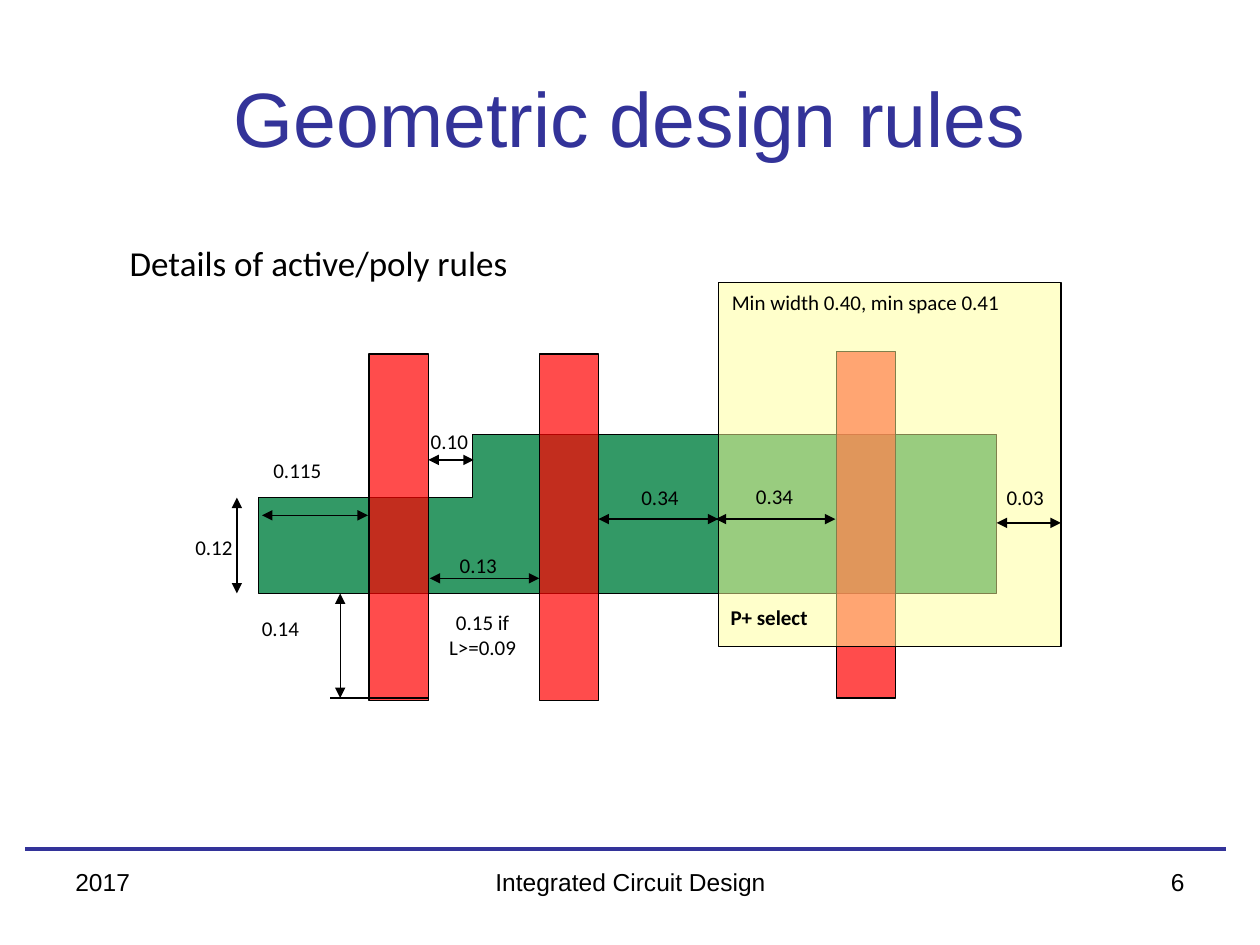
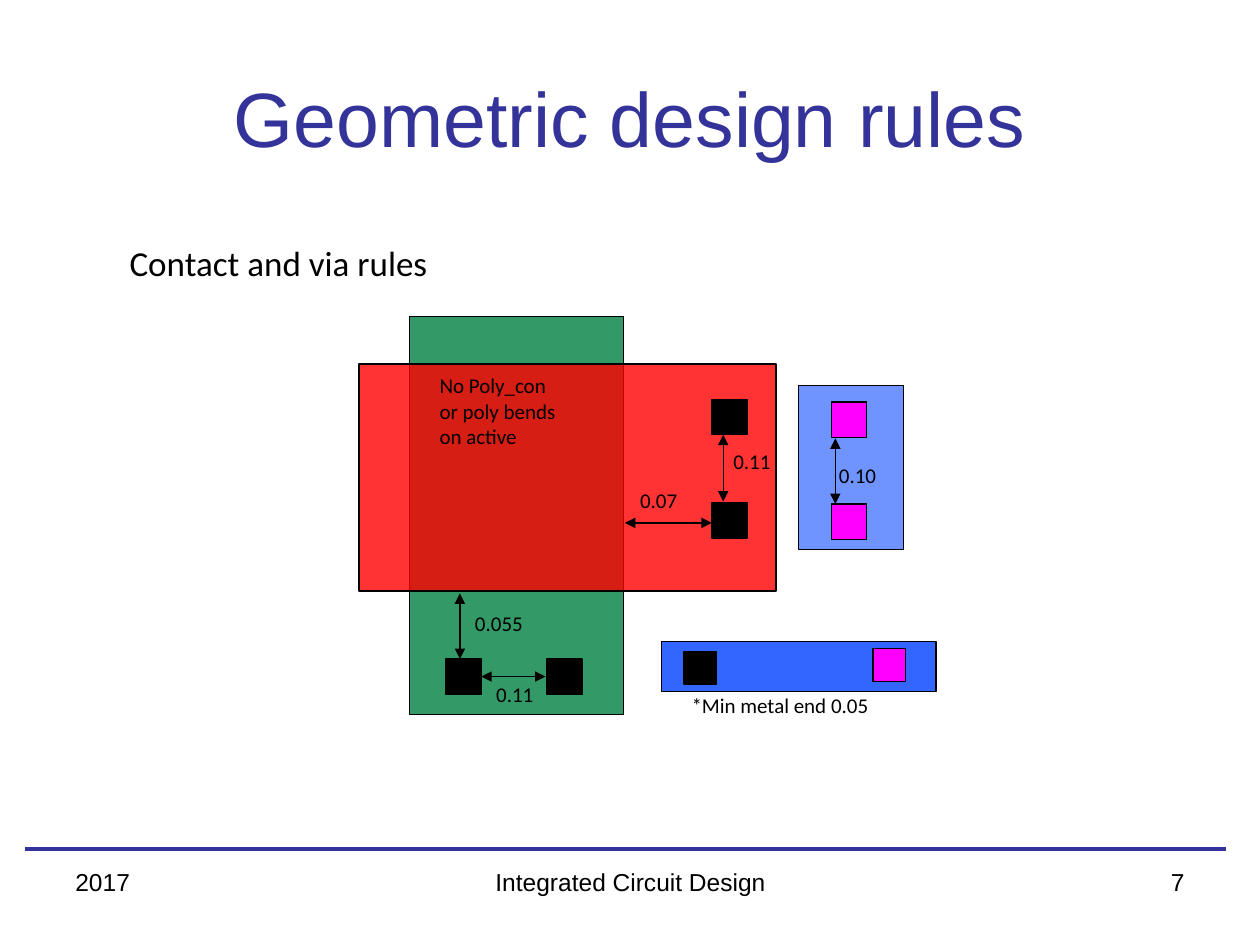
from lxml.etree import SubElement
from pptx import Presentation
from pptx.dml.color import RGBColor
from pptx.enum.shapes import MSO_CONNECTOR, MSO_SHAPE
from pptx.enum.text import MSO_ANCHOR, PP_ALIGN
from pptx.oxml.ns import qn
from pptx.util import Inches, Pt

NAVY, BLACK = "333399", "000000"
ACTIVE, POLY, SELECT = "339966", "FF0000", "FFFF99"
METAL, CONTACT, VIA = "3366FF", "000000", "FF00FF"
TITLE_FONT, LABEL_FONT = "Arial", "Calibri"
LEFT, CENTER, RIGHT = PP_ALIGN.LEFT, PP_ALIGN.CENTER, PP_ALIGN.RIGHT
WIDE, TIGHT = 0.1, 0.02  # side margins of the labels

TITLE = "Geometric design rules"
FOOTER_TOP, FOOTER_HEIGHT = 6.83, 0.52
FIRST_NUMBER = 6
POLY_SIZE = (0.47, 2.75)
CUT, SMALL_CUT = (0.28, 0.28), (0.26, 0.26)

# outlines: points; boxes: left, top, size, colour, opacity %
# arrows: x1, y1, x2, y2; labels: text, left, top, width, height, margin
SLIDES = [
    {
        "heading": "Details of active/poly rules",
        "outlines": [
            ([(2.05, 3.95), (3.75, 3.95), (3.75, 3.45), (7.91, 3.45),
              (7.91, 4.71), (2.05, 4.71)], ACTIVE),
        ],
        "boxes": [
            (2.93, 2.81, POLY_SIZE, POLY, 70),
            (4.28, 2.81, POLY_SIZE, POLY, 70),
            (6.64, 2.79, POLY_SIZE, POLY, 70),
            (5.7, 2.24, (2.72, 2.89), SELECT, 50),
        ],
        "lines": [(3.4, 5.54, 2.62, 5.54)],
        "arrows": [
            (2.7, 4.71, 2.7, 5.54),
            (2.08, 4.09, 2.92, 4.09),
            (3.4, 3.65, 3.76, 3.65),
            (4.75, 4.12, 5.7, 4.12),
            (5.68, 4.12, 6.63, 4.12),
            (1.88, 3.95, 1.88, 4.71),
            (3.41, 4.59, 4.28, 4.59),
            (8.42, 4.15, 7.91, 4.15),
        ],
        "labels": [
            ("0.14", 1.98, 4.84, 0.9, 0.56, WIDE),
            ("0.10", 3.32, 3.35, 0.92, 0.56, WIDE),
            ("0.115", 2.15, 3.58, 0.8, 0.34, TIGHT),
            ("0.34", 5.07, 3.8, 0.72, 0.56, TIGHT),
            ("0.03", 7.89, 3.8, 0.55, 0.3, WIDE),
            ("0.12", 1.53, 4.19, 0.9, 0.56, TIGHT),
            ("0.34", 5.98, 3.79, 0.67, 0.56, TIGHT),
            ("Min width 0.40, min space 0.41", 5.71, 2.25, 2.71, 0.4, WIDE),
            ("0.13", 3.55, 4.34, 1.11, 0.5, WIDE),
            ("0.15 if\nL>=0.09", 3.47, 4.79, 0.72, 0.41, TIGHT, CENTER),
            ("P+ select", 5.7, 4.75, 2.71, 0.4, WIDE, LEFT, True),
        ],
    },
    {
        "heading": "Contact and via rules",
        "outlines": [],
        "boxes": [
            (5.25, 5.09, (2.18, 0.4), METAL, 100),
            (3.25, 2.51, (1.7, 3.16), ACTIVE, 100),
            (2.85, 2.89, (3.31, 1.8), POLY, 80),
            (6.34, 3.06, (0.83, 1.3), METAL, 70),
            (3.54, 5.23, CUT, CONTACT, 100),
            (4.34, 5.23, CUT, CONTACT, 100),
            (5.65, 3.17, CUT, CONTACT, 100),
            (5.65, 3.99, CUT, CONTACT, 100),
            (6.6, 3.19, CUT, VIA, 100),
            (6.6, 4, CUT, VIA, 100),
            (5.43, 5.17, SMALL_CUT, CONTACT, 100),
            (6.93, 5.15, SMALL_CUT, VIA, 100),
        ],
        "lines": [],
        "arrows": [
            (3.65, 4.71, 3.65, 5.23),
            (4.96, 4.15, 5.65, 4.15),
            (6.63, 3.48, 6.63, 4),
            (3.82, 5.37, 4.33, 5.37),
            (5.74, 3.45, 5.74, 3.98),
        ],
        "labels": [
            ("0.11", 3.84, 5.36, 0.84, 0.48, WIDE),
            ("0.055", 3.75, 4.8, 0.7, 0.48, TIGHT),
            ("0.07", 5.06, 3.82, 0.58, 0.48, TIGHT),
            ("0.11", 5.8, 3.51, 0.54, 0.48, TIGHT),
            ("0.10", 6.56, 3.62, 0.81, 0.48, WIDE),
            ("No Poly_con\nor poly bends\non active", 3.39, 2.91, 1.57, 1.61, WIDE),
            ("*Min metal end 0.05", 5.39, 5.45, 2.03, 0.34, WIDE),
        ],
    },
]


def rgb(color):
    return RGBColor.from_string(color)


def add_text(s, text, left, top, width, height, margin=WIDE, align=LEFT,
             bold=False, size=12, font=LABEL_FONT, color=BLACK,
             anchor=MSO_ANCHOR.TOP):
    box = s.shapes.add_textbox(*map(Inches, (left, top, width, height)))
    tf = box.text_frame
    tf.word_wrap = True
    tf.vertical_anchor = anchor
    tf.margin_left = tf.margin_right = Inches(margin)
    tf.text = text
    for p in tf.paragraphs:
        p.alignment = align
        p.font.size, p.font.name, p.font.bold = Pt(size), font, bold
        p.font.color.rgb = rgb(color)


def paint(shape, color, opacity=100):
    """Give a layer its fill and thin black outline."""
    shape.shadow.inherit = False
    shape.fill.solid()
    shape.fill.fore_color.rgb = rgb(color)
    if opacity < 100:
        clr = shape._element.spPr.find(qn("a:solidFill"))[0]
        SubElement(clr, qn("a:alpha"), val=str(opacity * 1000))
    shape.line.color.rgb = rgb(BLACK)
    shape.line.width = Pt(0.75)


def add_outline(s, points, color):
    start, *rest = [(Inches(x), Inches(y)) for x, y in points]
    builder = s.shapes.build_freeform(*start)
    builder.add_line_segments(rest, close=True)
    paint(builder.convert_to_shape(), color)


def add_box(s, left, top, size, color, opacity):
    box = s.shapes.add_shape(MSO_SHAPE.RECTANGLE, *map(Inches, (left, top, *size)))
    paint(box, color, opacity)


def add_line(s, ends, color=BLACK, width=0.75, arrows=False):
    line = s.shapes.add_connector(MSO_CONNECTOR.STRAIGHT, *map(Inches, ends))
    line.line.color.rgb = rgb(color)
    line.line.width = Pt(width)
    if arrows:
        for end in ("a:headEnd", "a:tailEnd"):
            SubElement(line.line._get_or_add_ln(), qn(end), type="triangle")
    SubElement(line._element.spPr, qn("a:effectLst"))


def add_frame(s, number, heading):
    """Add the title, heading, rule and footer that every slide has."""
    add_line(s, (0.2, 6.74, 9.73, 6.74), NAVY, 2.25)
    add_text(s, TITLE, 0.5, 0.3, 9, 1.25, align=CENTER, size=44,
             font=TITLE_FONT, color=NAVY, anchor=MSO_ANCHOR.MIDDLE)
    for text, left, width, align in [
        ("2017", 0.5, 2.33, LEFT),
        ("Integrated Circuit Design", 3.42, 3.17, CENTER),
        (str(number), 7.17, 2.33, RIGHT),
    ]:
        add_text(s, text, left, FOOTER_TOP, width, FOOTER_HEIGHT,
                 align=align, size=14, font=TITLE_FONT)
    add_text(s, heading, 0.93, 1.87, 3.72, 0.4, size=20)


def main():
    prs = Presentation()
    prs.slide_width, prs.slide_height = Inches(10), Inches(7.5)
    for number, content in enumerate(SLIDES, FIRST_NUMBER):
        s = prs.slides.add_slide(prs.slide_layouts[6])
        add_frame(s, number, content["heading"])
        for outline in content["outlines"]:
            add_outline(s, *outline)
        for box in content["boxes"]:
            add_box(s, *box)
        for ends in content["lines"]:
            add_line(s, ends)
        for ends in content["arrows"]:
            add_line(s, ends, arrows=True)
        for label in content["labels"]:
            add_text(s, *label)
    prs.save("out.pptx")


if __name__ == "__main__":
    main()
